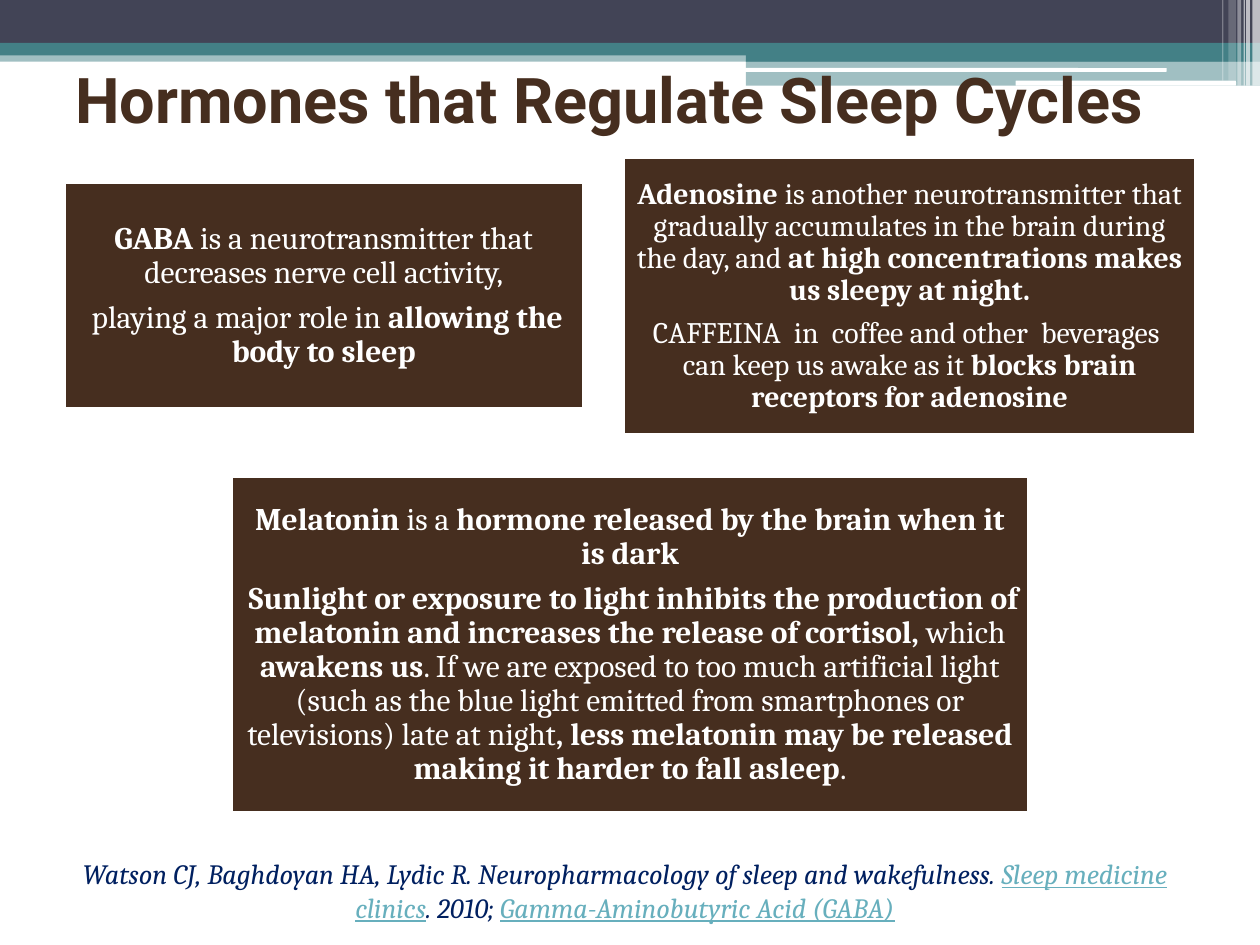
from dataclasses import dataclass

from lxml import etree
from pptx import Presentation
from pptx.dml.color import RGBColor
from pptx.enum.shapes import MSO_SHAPE
from pptx.enum.text import MSO_ANCHOR, PP_ALIGN
from pptx.oxml.ns import qn
from pptx.util import Emu, Pt

RECT, ROUND = MSO_SHAPE.RECTANGLE, MSO_SHAPE.ROUNDED_RECTANGLE
TOP, MIDDLE = MSO_ANCHOR.TOP, MSO_ANCHOR.MIDDLE
LEFT, CENTER = PP_ALIGN.LEFT, PP_ALIGN.CENTER
EMU_PER_PX = 9144  # 100 px to the inch


@dataclass(frozen=True)
class Theme:
    white: str = "FFFFFF"
    brown: str = "462E1F"
    slate: str = "424456"
    teal: str = "438086"
    navy: str = "002060"
    link: str = "67AFBD"
    heading_font: str = "Roboto"
    body_font: str = "Cambria"
    title_size: int = 36
    card_size: int = 18
    tight_size: int = 17
    source_size: int = 16
    card_border: float = 1.5


THEME = Theme()


@dataclass(frozen=True)
class Area:
    left: int
    top: int
    width: int
    height: int

    def emu(self) -> list[Emu]:
        return [px(n) for n in (self.left, self.top, self.width, self.height)]


@dataclass(frozen=True)
class Band:
    area: Area
    color: str
    opacity: int = 100
    kind: int = RECT


@dataclass(frozen=True)
class Span:
    text: str
    bold: bool = False
    italic: bool = False
    underline: bool = False
    color: str = THEME.white


@dataclass(frozen=True)
class Card:
    area: Area
    size: int
    paras: list[list[Span]]


def px(count: int) -> Emu:
    return Emu(count * EMU_PER_PX)


def strong(text: str) -> Span:
    return Span(text, bold=True)


# Header decoration, from back to front
BANDS = [
    Band(Area(0, 40, 1000, 9), THEME.teal, 50),
    Band(Area(0, 0, 1000, 34), THEME.slate),
    Band(Area(0, 34, 1000, 10), THEME.teal),
    Band(Area(592, 39, 408, 10), THEME.teal),
    Band(Area(592, 48, 408, 20), THEME.teal, 50),
    Band(Area(591, 54, 335, 3), THEME.white, kind=ROUND),
    Band(Area(806, 64, 175, 4), THEME.white, kind=ROUND),
    Band(Area(994, 0, 6, 68), THEME.white, 65),
    Band(Area(989, 0, 3, 68), THEME.white, 65),
    Band(Area(987, 0, 1, 68), THEME.white, 60),
    Band(Area(982, 0, 3, 68), THEME.white, 40),
    Band(Area(975, 0, 6, 64), THEME.white, 20),
    Band(Area(970, 0, 1, 64), THEME.white, 30),
]

CARDS = [
    Card(Area(51, 145, 412, 179), THEME.card_size, [
        [strong("GABA"),
         Span(" is a neurotransmitter that decreases nerve cell activity,")],
        [Span(" playing a major role in "), strong("allowing the body to sleep")],
    ]),
    Card(Area(495, 125, 454, 220), THEME.tight_size, [
        [strong("Adenosine"),
         Span(" is another neurotransmitter that gradually accumulates in the "
              "brain during the day, and "),
         strong("at high concentrations makes us sleepy at night.")],
        [Span("CAFFEINA  in  coffee and other  beverages  can keep us awake as it "),
         strong("blocks brain receptors for adenosine")],
    ]),
    Card(Area(184, 378, 632, 267), THEME.card_size, [
        [strong("Melatonin"), Span(" is a "),
         strong("hormone released by the brain when it is dark")],
        [strong(" Sunlight or exposure to light inhibits the production of "
                "melatonin and increases the release of cortisol,"),
         Span(" which "), strong("awakens us"),
         Span(". If we are exposed to too much artificial light (such as the blue "
              "light emitted from smartphones or televisions) late at night"),
         strong(", less melatonin may be released making it harder to fall asleep"),
         Span(".")],
    ]),
]

TITLE = [Span("Hormones that Regulate Sleep Cycles", bold=True, color=THEME.brown)]
SOURCE = [
    Span("Watson CJ, Baghdoyan HA, Lydic R. Neuropharmacology of sleep and "
         "wakefulness. ", italic=True, color=THEME.navy),
    Span("Sleep medicine clinics", italic=True, underline=True, color=THEME.link),
    Span(". 2010; ", italic=True, color=THEME.navy),
    Span("Gamma-Aminobutyric Acid (GABA)", italic=True, underline=True,
         color=THEME.link),
]


def add_block(page, area: Area, color: str, kind: int = RECT):
    shape = page.shapes.add_shape(kind, *area.emu())
    shape.shadow.inherit = False
    shape.fill.solid()
    shape.fill.fore_color.rgb = RGBColor.from_string(color)
    shape.line.fill.background()
    return shape


def draw_band(page, band: Band) -> None:
    shape = add_block(page, band.area, band.color, band.kind)
    if band.opacity < 100:
        color = shape.fill._xPr.find(qn("a:solidFill"))[0]
        etree.SubElement(color, qn("a:alpha"), val=str(band.opacity * 1000))


def set_frame(frame, anchor: int, insets: tuple[int, int, int, int]) -> None:
    frame.word_wrap = True
    frame.vertical_anchor = anchor
    (frame.margin_left, frame.margin_top,
     frame.margin_right, frame.margin_bottom) = map(px, insets)


def write_para(para, spans: list[Span], font: str, size: int, align: int) -> None:
    para.alignment = align
    for span in spans:
        run = para.add_run()
        run.text = span.text
        run.font.name, run.font.size = font, Pt(size)
        run.font.bold, run.font.italic = span.bold, span.italic
        run.font.underline = span.underline
        run.font.color.rgb = RGBColor.from_string(span.color)


def draw_card(page, card: Card) -> None:
    shape = add_block(page, card.area, THEME.brown)
    shape.line.color.rgb = RGBColor.from_string(THEME.white)
    shape.line.width = Pt(THEME.card_border)
    frame = shape.text_frame
    set_frame(frame, MIDDLE, (7, 7, 7, 7))
    for index, spans in enumerate(card.paras):
        para = frame.add_paragraph() if index else frame.paragraphs[0]
        para.line_spacing = 0.9
        para.space_after = Pt(0.35 * card.size)
        write_para(para, spans, THEME.body_font, card.size, CENTER)


def draw_text(page, area: Area, spans: list[Span], font: str, size: int,
              align: int, anchor: int, insets: tuple[int, int, int, int]) -> None:
    frame = page.shapes.add_textbox(*area.emu()).text_frame
    set_frame(frame, anchor, insets)
    write_para(frame.paragraphs[0], spans, font, size, align)


def main() -> None:
    deck = Presentation()
    deck.slide_width, deck.slide_height = px(1000), px(750)
    page = deck.slides.add_slide(deck.slide_layouts[6])
    for band in BANDS:
        draw_band(page, band)
    # The deep bottom inset lifts the title up against the header
    draw_text(page, Area(50, 58, 900, 97), TITLE, THEME.heading_font,
              THEME.title_size, LEFT, MIDDLE, (10, 0, 10, 57))
    for card in CARDS:
        draw_card(page, card)
    draw_text(page, Area(25, 675, 942, 91), SOURCE, THEME.body_font,
              THEME.source_size, CENTER, TOP, (10, 5, 10, 5))
    deck.save("out.pptx")


if __name__ == "__main__":
    main()
